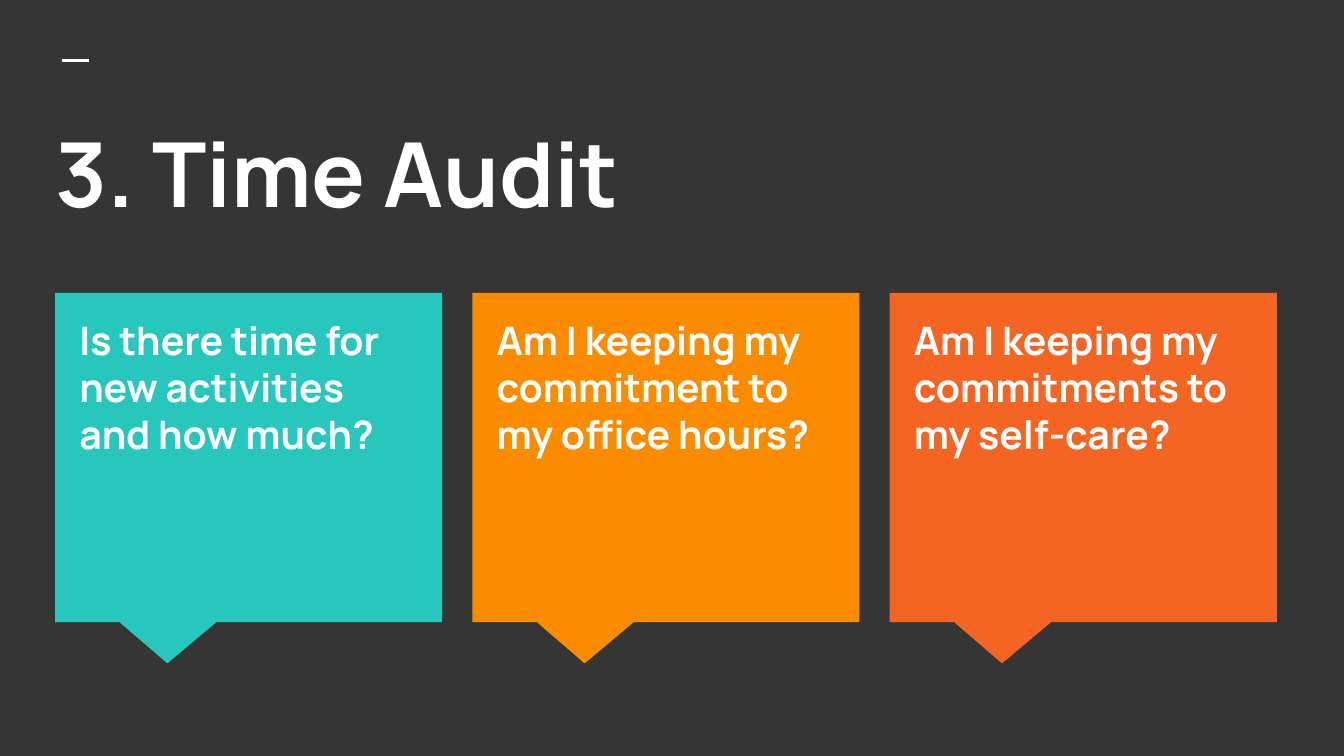
from lxml import etree
from pptx import Presentation
from pptx import util as u
from pptx.dml.color import RGBColor
from pptx.enum import shapes, text
from pptx.oxml.ns import qn

WIDE = 10
HIGH = WIDE * 9 / 16
DARK = RGBColor(0x35, 0x35, 0x35)
WHITE = RGBColor(0xFF, 0xFF, 0xFF)
TEAL = RGBColor(0x27, 0xC7, 0xBD)
AMBER = RGBColor(0xFB, 0x8C, 0x00)
CORAL = RGBColor(0xF4, 0x65, 0x24)
FONT = "Manrope"

# Grid of the three cards
LEFT, TOP, STEP = 0.41, 2.18, 6.21 / 2
CARD_W, CARD_H = 2.88, 2.45
PAD_X, PAD_Y, TEXT_H = 0.08, 0.07, 2.19

CARDS = [
    (TEAL, "Is there time for new activities and how much?"),
    (AMBER, "Am I keeping my commitment to my office hours?"),
    (CORAL, "Am I keeping my commitments to my self-care?"),
]


def place(item, left, top, width, height):
    item.left, item.top = u.Inches(left), u.Inches(top)
    item.width, item.height = u.Inches(width), u.Inches(height)


def write(holder, words, size, after=0):
    """Fill a placeholder with one bold, left-aligned, unbulleted paragraph."""
    frame = holder.text_frame
    frame.word_wrap = True
    frame.auto_size = text.MSO_AUTO_SIZE.NONE
    frame.vertical_anchor = text.MSO_ANCHOR.TOP
    frame.margin_left = frame.margin_right = u.Inches(0.1)
    frame.margin_top = frame.margin_bottom = u.Inches(0.1)
    para = frame.paragraphs[0]
    para.alignment = text.PP_ALIGN.LEFT
    para.space_before, para.space_after = u.Pt(0), u.Pt(after)
    props = para._p.get_or_add_pPr()
    props.set("marL", "0")
    props.set("indent", "0")
    etree.SubElement(props, qn("a:buNone"))
    run = para.add_run()
    run.text = words
    font = run.font
    font.name, font.size, font.bold = FONT, u.Pt(size), True
    font.color.rgb = WHITE


def add_dash(slide):
    y = u.Inches(0.08 * HIGH)
    line = slide.shapes.add_connector(
        shapes.MSO_CONNECTOR.STRAIGHT, u.Inches(0.46), y, u.Inches(0.66), y)
    line.line.color.rgb = WHITE
    line.line.width = u.Pt(1.5)
    etree.SubElement(line._element.spPr, qn("a:effectLst"))


def add_card(slide, holder, col, color, words):
    """Draw a callout in a grid column and lay its text over it."""
    left = LEFT + col * STEP
    card = slide.shapes.add_shape(
        shapes.MSO_SHAPE.RECTANGULAR_CALLOUT, u.Inches(left), u.Inches(TOP),
        u.Inches(CARD_W), u.Inches(CARD_H))
    card.adjustments[0], card.adjustments[1] = -0.21, 5 / 8
    card.shadow.inherit = False
    card.fill.solid()
    card.fill.fore_color.rgb = color
    card.line.fill.background()
    place(holder, left + PAD_X, TOP + PAD_Y, CARD_W - 2 * PAD_X, TEXT_H)
    write(holder, words, 21, 12)
    card._element.addnext(holder._element)


def main():
    deck = Presentation()
    deck.slide_width, deck.slide_height = u.Inches(WIDE), u.Inches(HIGH)
    slide = deck.slides.add_slide(deck.slide_layouts.get_by_name("Comparison"))
    back = slide.background.fill
    back.solid()
    back.fore_color.rgb = DARK

    title, *bodies = slide.placeholders
    add_dash(slide)
    place(title, 0.31, 0.78, 9.43, 1.12)
    write(title, "3. Time Audit", 48)
    for col, (color, words) in enumerate(CARDS):
        add_card(slide, bodies[col], col, color, words)
    for spare in bodies[len(CARDS):]:
        spare._element.getparent().remove(spare._element)
    deck.save("out.pptx")


if __name__ == "__main__":
    main()
